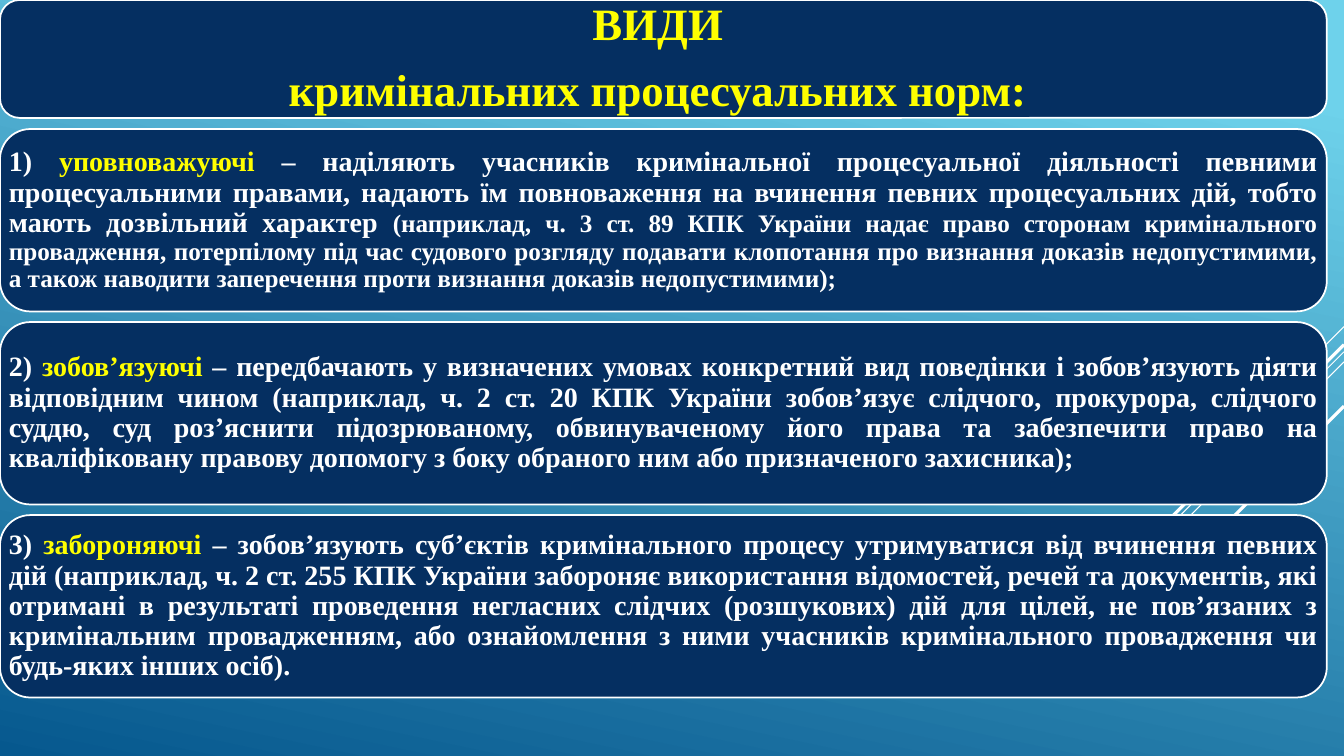
import pptx
import pptx.dml.color
import pptx.enum.shapes
import pptx.enum.text
import pptx.oxml.ns
import pptx.util
import lxml.etree

Inches = pptx.util.Inches
Pt = pptx.util.Pt
RGBColor = pptx.dml.color.RGBColor
ALIGN = pptx.enum.text.PP_ALIGN

NAVY = RGBColor(0x05, 0x2F, 0x61)
WHITE = RGBColor(0xFF, 0xFF, 0xFF)
YELLOW = RGBColor(0xFF, 0xFF, 0x00)
SKY = RGBColor(0x6E, 0xD2, 0xEB)
DEEP_BLUE = RGBColor(0x06, 0x58, 0x8E)

FONT = "Times New Roman"
EDGE = 13.33
CARD_WIDTH = 13.16
CARD_HEIGHT = 1.81
CARD_TOP = 1.28
CARD_PITCH = 1.915

STREAKS = [
    (3.24, 1.0, 0.75),
    (3.49, 3.26, 0.75),
    (3.59, 2.07, 0.75),
    (3.42, 1.91, 2.25),
    (4.03, 1.39, 2.25),
]

TITLE = ["ВИДИ ", "кримінальних процесуальних норм: "]

NORMS = [
    [
        ("1) ", 20, WHITE),
        ("уповноважуючі", 20, YELLOW),
        (" – наділяють учасників кримінальної процесуальної діяльності певними "
         "процесуальними правами, надають їм повноваження на вчинення певних "
         "процесуальних дій, тобто мають дозвільний характер ", 20, WHITE),
        ("(наприклад, ч. 3 ст. 89 КПК України надає право сторонам кримінального "
         "провадження, потерпілому під час судового розгляду подавати клопотання "
         "про визнання доказів недопустимими, а також наводити заперечення проти "
         "визнання доказів недопустимими); ", 18, WHITE),
    ],
    [
        ("2) ", 20, WHITE),
        ("зобов’язуючі", 20, YELLOW),
        (" – передбачають у визначених умовах конкретний вид поведінки і "
         "зобов’язують діяти відповідним чином (наприклад, ч. 2 ст. 20 КПК України "
         "зобов’язує слідчого, прокурора, слідчого суддю, суд роз’яснити "
         "підозрюваному, обвинуваченому його права та забезпечити право на "
         "кваліфіковану правову допомогу з боку обраного ним або призначеного "
         "захисника); ", 20, WHITE),
    ],
    [
        ("3) ", 20, WHITE),
        ("забороняючі", 20, YELLOW),
        (" – зобов’язують суб’єктів кримінального процесу утримуватися від "
         "вчинення певних дій (наприклад, ч. 2 ст. 255 КПК України забороняє "
         "використання відомостей, речей та документів, які отримані в результаті "
         "проведення негласних слідчих (розшукових) дій для цілей, не пов’язаних "
         "з кримінальним провадженням, або ознайомлення з ними учасників "
         "кримінального провадження чи будь-яких інших осіб). ", 20, WHITE),
    ],
]


def set_background(s):
    """Fill the slide with the sky-to-deep-blue gradient."""
    fill = s.background.fill
    fill.gradient()
    fill.gradient_angle = 258
    stops = ((0.1, SKY), (1.0, DEEP_BLUE))
    for stop, (position, color) in zip(fill.gradient_stops, stops):
        stop.position = position
        stop.color.rgb = color


def add_streak(s, top, length, width):
    """Draw a diagonal line down and left from the right edge."""
    line = s.shapes.add_connector(
        pptx.enum.shapes.MSO_CONNECTOR.STRAIGHT,
        Inches(EDGE), Inches(top), Inches(EDGE - length), Inches(top + length))
    line.line.color.rgb = WHITE
    line.line.width = Pt(width)
    lxml.etree.SubElement(line._element.spPr, pptx.oxml.ns.qn("a:effectLst"))


def add_card(s, top, height, paragraphs, align):
    """Add a rounded card with paragraphs of (text, size, colour) runs."""
    sp = s.shapes.add_shape(
        pptx.enum.shapes.MSO_SHAPE.ROUNDED_RECTANGLE,
        0, Inches(top), Inches(CARD_WIDTH), Inches(height))
    sp.shadow.inherit = False
    sp.fill.solid()
    sp.fill.fore_color.rgb = NAVY
    sp.line.color.rgb = WHITE
    sp.line.width = Pt(1.25)
    tf = sp.text_frame
    tf.word_wrap = True
    tf.vertical_anchor = pptx.enum.text.MSO_ANCHOR.MIDDLE
    tf.margin_left = tf.margin_right = tf.margin_top = tf.margin_bottom = 0
    for i, runs in enumerate(paragraphs):
        p = tf.add_paragraph() if i else tf.paragraphs[0]
        p.alignment = align
        p.line_spacing = 0.9
        p.space_after = Pt(13)
        for text, size, color in runs:
            r = p.add_run()
            r.text = text
            r.font.name = FONT
            r.font.size = Pt(size)
            r.font.bold = True
            r.font.color.rgb = color


def main():
    """Build the slide and save it."""
    prs = pptx.Presentation()
    prs.slide_width = Inches(EDGE)
    prs.slide_height = Inches(7.5)
    s = prs.slides.add_slide(prs.slide_layouts[6])
    set_background(s)
    for top, length, width in STREAKS:
        add_streak(s, top, length, width)
    title = [[(text, 32, YELLOW)] for text in TITLE]
    add_card(s, 0, 1.17, title, ALIGN.CENTER)
    for i, runs in enumerate(NORMS):
        add_card(s, CARD_TOP + i * CARD_PITCH, CARD_HEIGHT, [runs], ALIGN.JUSTIFY)
    prs.save("out.pptx")


if __name__ == "__main__":
    main()
